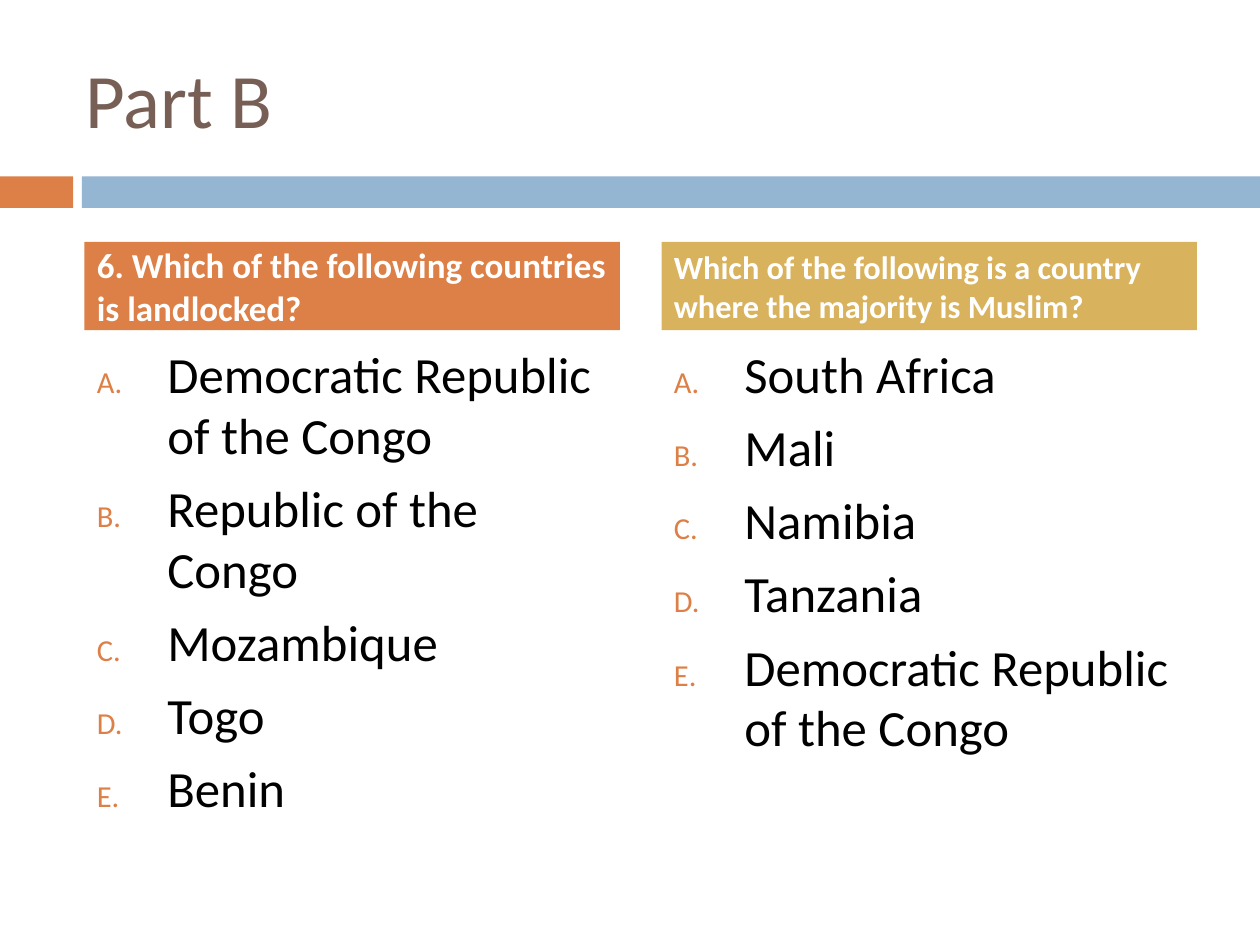
from dataclasses import dataclass

from lxml.etree import SubElement
from pptx import Presentation
from pptx.dml.color import RGBColor
from pptx.enum.shapes import MSO_SHAPE as Shape
from pptx.enum.text import MSO_ANCHOR as Anchor, PP_ALIGN as Align
from pptx.oxml.ns import qn
from pptx.util import Inches, Pt


@dataclass(frozen=True)
class Theme:
    font: str = "Calibri"
    orange: str = "DD8047"
    blue: str = "94B6D2"
    gold: str = "D8B25C"
    brown: str = "775F55"
    black: str = "000000"
    white: str = "FFFFFF"
    title_size: float = 44
    answer_size: float = 29
    letter_percent: int = 60
    space_before: float = 7


@dataclass(frozen=True)
class Question:
    prompt: str
    prompt_size: float
    color: str
    answers: tuple[str, ...]


THEME = Theme()
COLUMN_LEFT, COLUMN_STEP, COLUMN_WIDTH = 0.67, 4.58, 4.25
ANSWER_INDENT = Inches(0.56)

QUESTIONS = (
    Question("6. Which of the following countries is landlocked?", 20, THEME.orange,
             ("Democratic Republic of the Congo", "Republic of the Congo",
              "Mozambique", "Togo", "Benin")),
    Question("Which of the following is a country where the majority is Muslim?",
             18.5, THEME.gold,
             ("South Africa", "Mali", "Namibia", "Tanzania",
              "Democratic Republic of the Congo")),
)


def add_bar(slide, left: float, top: float, width: float, height: float, color: str):
    bar = slide.shapes.add_shape(Shape.RECTANGLE, Inches(left), Inches(top),
                                 Inches(width), Inches(height))
    bar.shadow.inherit = False
    bar.fill.solid()
    bar.fill.fore_color.rgb = RGBColor.from_string(color)
    bar.line.fill.background()
    return bar


def add_text_area(slide, left: float, top: float, width: float, height: float):
    return slide.shapes.add_textbox(Inches(left), Inches(top),
                                    Inches(width), Inches(height))


def write(area, text: str, size: float, color: str, bold: bool = False,
          anchor: Anchor = Anchor.MIDDLE, space_before: float = 0) -> None:
    frame = area.text_frame
    frame.word_wrap = True
    frame.vertical_anchor = anchor
    frame.text = text
    for paragraph in frame.paragraphs:
        paragraph.alignment = Align.LEFT
        paragraph.space_before = Pt(space_before)
        for run in paragraph.runs:
            run.font.name = THEME.font
            run.font.size = Pt(size)
            run.font.bold = bold
            run.font.color.rgb = RGBColor.from_string(color)


def add_letter(paragraph) -> None:
    """Number the paragraph A., B., C. with a hanging indent."""
    properties = paragraph._p.get_or_add_pPr()
    properties.set("marL", str(ANSWER_INDENT))
    properties.set("indent", str(-ANSWER_INDENT))
    letter_color = SubElement(properties, qn("a:buClr"))
    SubElement(letter_color, qn("a:srgbClr"), val=THEME.orange)
    SubElement(properties, qn("a:buSzPct"), val=str(THEME.letter_percent * 1000))
    SubElement(properties, qn("a:buFont"), typeface=THEME.font)
    SubElement(properties, qn("a:buAutoNum"), type="alphaUcPeriod")


def add_question(slide, left: float, question: Question) -> None:
    answers = add_text_area(slide, left, 2.67, COLUMN_WIDTH, 3.92)
    write(answers, "\n".join(question.answers), THEME.answer_size, THEME.black,
          anchor=Anchor.TOP, space_before=THEME.space_before)
    for paragraph in answers.text_frame.paragraphs:
        add_letter(paragraph)

    prompt = add_bar(slide, left, 1.92, COLUMN_WIDTH, 0.7, question.color)
    write(prompt, question.prompt, question.prompt_size, THEME.white, bold=True,
          space_before=THEME.space_before)


def main() -> None:
    deck = Presentation()
    deck.slide_width, deck.slide_height = Inches(10), Inches(7.5)
    slide = deck.slides.add_slide(deck.slide_layouts[6])

    # Divider band
    add_bar(slide, 0, 1.4, 0.58, 0.25, THEME.orange)
    add_bar(slide, 0.65, 1.4, 9.35, 0.25, THEME.blue)

    # Title
    title = add_text_area(slide, 0.58, 0.3, 8.92, 0.95)
    write(title, "Part B", THEME.title_size, THEME.brown)

    # Question columns
    for column, question in enumerate(QUESTIONS):
        add_question(slide, COLUMN_LEFT + column * COLUMN_STEP, question)

    deck.save("out.pptx")


if __name__ == "__main__":
    main()
